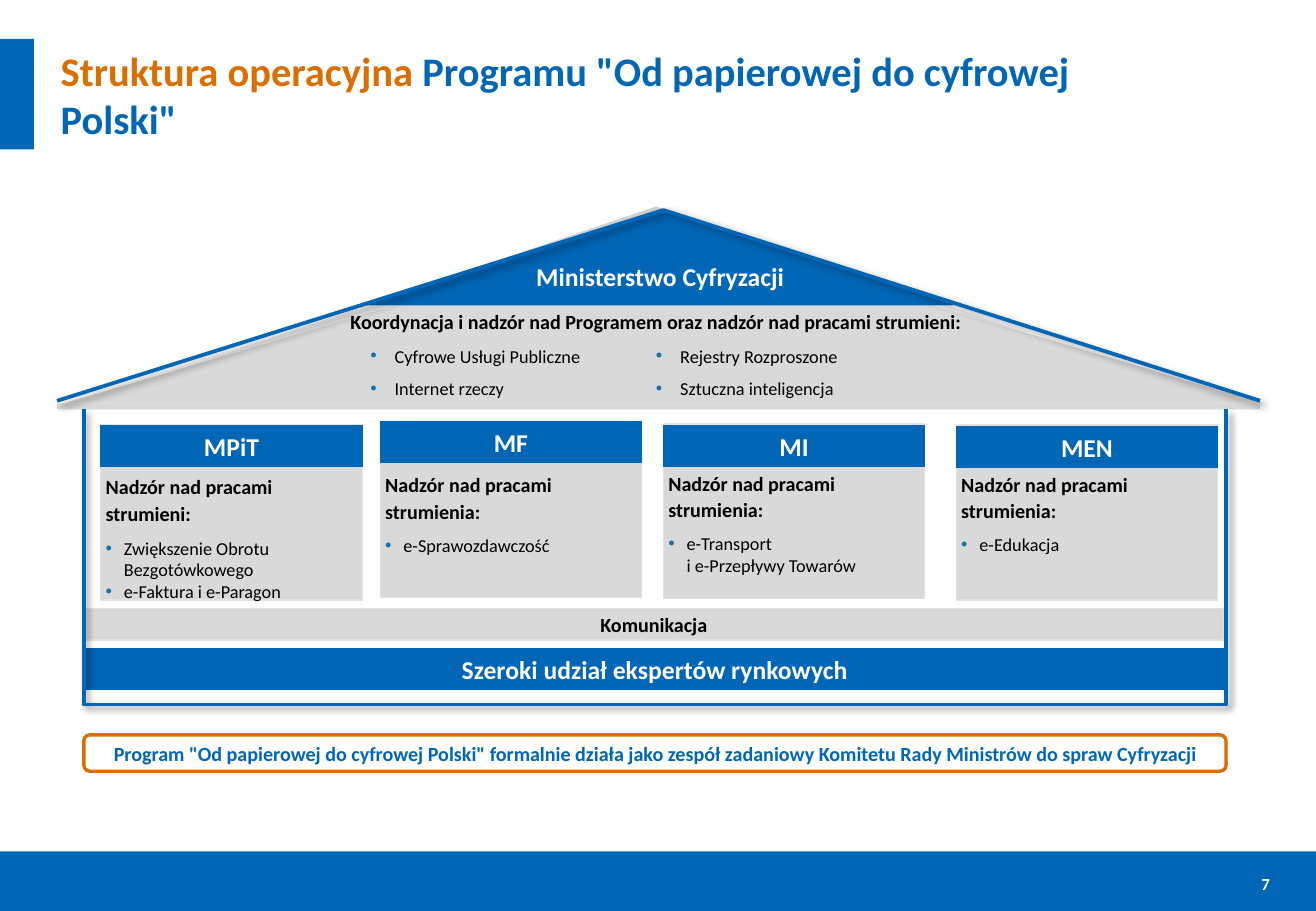
from dataclasses import dataclass
from typing import Optional

from lxml import etree
from pptx import Presentation
from pptx.dml.color import RGBColor
from pptx.enum.shapes import MSO_SHAPE
from pptx.enum.text import MSO_ANCHOR, PP_ALIGN
from pptx.oxml.ns import qn
from pptx.util import Inches, Pt

BLUE = RGBColor(0x01, 0x66, 0xB6)
ORANGE = RGBColor(0xDC, 0x6E, 0x00)
GREY = RGBColor(0xD9, 0xD9, 0xD9)
EDGE = RGBColor(0xE2, 0xE2, 0xE2)
BULLET = RGBColor(0x11, 0x74, 0xAE)
BLACK = RGBColor(0, 0, 0)
WHITE = RGBColor(0xFF, 0xFF, 0xFF)
ROOF_SHADES = ((0, "D0D0D0"), (50, "EDEDED"), (85, "FFFFFF"))

RECT, TRIANGLE = MSO_SHAPE.RECTANGLE, MSO_SHAPE.ISOSCELES_TRIANGLE
TRAPEZOID, ROUNDED = MSO_SHAPE.TRAPEZOID, MSO_SHAPE.ROUNDED_RECTANGLE
LEFT, CENTER = PP_ALIGN.LEFT, PP_ALIGN.CENTER
TOP, MIDDLE = MSO_ANCHOR.TOP, MSO_ANCHOR.MIDDLE

FONT = "Calibri"
HEADING, STRONG, BODY = 15.2, 11.9, 10.8
COLUMN_WIDTH, COLUMN_HEIGHT, HEADER_HEIGHT = 2.15, 1.44, 0.34

Box = tuple[float, float, float, float]
Points = list[tuple[float, float]]


@dataclass
class Ministry:
    name: str
    left: float
    header_top: float
    body_top: float
    lead: str
    leading: float
    streams: list[str]


@dataclass
class Label:
    text: str
    size: float
    color: RGBColor
    insets: Box = (0.1, 0.05, 0.1, 0.05)


MINISTRIES = [
    Ministry("MPiT", 0.83, 3.5, 3.5, "Nadzór nad pracami strumieni:", 16.2,
             ["Zwiększenie Obrotu Bezgotówkowego", "e-Faktura i e-Paragon"]),
    Ministry("MF", 3.13, 3.47, 3.48, "Nadzór nad pracami strumienia:", 16.2,
             ["e-Sprawozdawczość"]),
    Ministry("MI", 5.46, 3.5, 3.49, "Nadzór nad pracami strumienia:", 15.2,
             ["e-Transport\vi e-Przepływy Towarów"]),
    Ministry("MEN", 7.87, 3.51, 3.5, "Nadzór nad pracami strumienia:", 15.2,
             ["e-Edukacja"]),
]
COORDINATED = [["Cyfrowe Usługi Publiczne", "Internet rzeczy"],
               ["Rejestry Rozproszone", "Sztuczna inteligencja"]]


def set_frame(frame, insets: Box, anchor=TOP) -> None:
    frame.word_wrap = True
    frame.vertical_anchor = anchor
    (frame.margin_left, frame.margin_top,
     frame.margin_right, frame.margin_bottom) = map(Inches, insets)


def style(paragraph, size: float, color: RGBColor, bold=True, align=LEFT) -> None:
    paragraph.alignment = align
    for run in paragraph.runs:
        run.font.name, run.font.size, run.font.bold = FONT, Pt(size), bold
        run.font.color.rgb = color


def bullet(paragraph, text: str, indent: float) -> None:
    paragraph.text = text
    properties = paragraph._p.get_or_add_pPr()
    properties.set("marL", str(Inches(indent)))
    properties.set("indent", str(-Inches(indent)))
    color = etree.SubElement(properties, qn("a:buClr"))
    etree.SubElement(color, qn("a:srgbClr"), val=str(BULLET))
    etree.SubElement(properties, qn("a:buFont"), typeface="Arial")
    etree.SubElement(properties, qn("a:buChar"), char="•")
    style(paragraph, BODY, BLACK, bold=False)


def add_block(slide, box: Box, fill: RGBColor, line: Optional[RGBColor] = None,
              width: float = 0.5, kind=RECT, label: Optional[Label] = None):
    block = slide.shapes.add_shape(kind, *map(Inches, box))
    block.shadow.inherit = False
    block.fill.solid()
    block.fill.fore_color.rgb = fill
    if line is None:
        block.line.fill.background()
    else:
        block.line.color.rgb = line
        block.line.width = Pt(width)
    if label:
        set_frame(block.text_frame, label.insets, MIDDLE)
        block.text_frame.text = label.text
        style(block.text_frame.paragraphs[0], label.size, label.color, align=CENTER)
    return block


def add_text(slide, box: Box, insets: Box, anchor=TOP):
    frame = slide.shapes.add_textbox(*map(Inches, box)).text_frame
    set_frame(frame, insets, anchor)
    return frame


def add_outline(slide, points: Points) -> None:
    start, *rest = [(Inches(x), Inches(y)) for x, y in points]
    builder = slide.shapes.build_freeform(*start)
    builder.add_line_segments(rest, close=False)
    outline = builder.convert_to_shape()
    outline.fill.background()
    outline.line.color.rgb = BLUE
    outline.line.width = Pt(2.25)
    effects = etree.SubElement(outline._element.spPr, qn("a:effectLst"))
    shadow = etree.SubElement(effects, qn("a:outerShdw"), blurRad=str(Pt(4)),
                              dist=str(Pt(3)), dir="2700000", algn="tl", rotWithShape="0")
    color = etree.SubElement(shadow, qn("a:srgbClr"), val=str(BLACK))
    etree.SubElement(color, qn("a:alpha"), val="40000")


def shade_roof(roof) -> None:
    roof.fill.gradient()
    gradient = roof._element.spPr.find(qn("a:gradFill"))
    for child in list(gradient):
        gradient.remove(child)
    stops = etree.SubElement(gradient, qn("a:gsLst"))
    for position, shade in ROOF_SHADES:
        stop = etree.SubElement(stops, qn("a:gs"), pos=str(position * 1000))
        etree.SubElement(stop, qn("a:srgbClr"), val=shade)
    etree.SubElement(gradient, qn("a:lin"), ang="5400000", scaled="0")


def add_ministry(slide, ministry: Ministry) -> None:
    body = add_block(slide, (ministry.left, ministry.body_top, COLUMN_WIDTH, COLUMN_HEIGHT),
                     GREY, EDGE, 0.75)
    frame = body.text_frame
    set_frame(frame, (0.04, 0.38, 0.04, 0.11))
    lead = frame.paragraphs[0]
    lead.text = ministry.lead
    lead.line_spacing, lead.space_after = Pt(ministry.leading), Pt(6.5)
    style(lead, STRONG, BLACK)
    for stream in ministry.streams:
        bullet(frame.add_paragraph(), stream, 0.15)
    add_block(slide, (ministry.left, ministry.header_top, COLUMN_WIDTH, HEADER_HEIGHT),
              BLUE, BLUE, label=Label(ministry.name, HEADING, WHITE))


def main() -> None:
    deck = Presentation()
    deck.slide_width, deck.slide_height = Inches(10.83), Inches(7.5)
    slide = deck.slides.add_slide(deck.slide_layouts[6])

    # Page frame, number and title
    add_block(slide, (0, 7.01, 10.83, 0.49), BLUE)
    add_block(slide, (0, 0.32, 0.28, 0.91), BLUE)
    number = add_text(slide, (10.38, 7.19, 0.3, 0.19), (0, 0, 0, 0)).paragraphs[0]
    number.text = "7"
    style(number, 10, WHITE)
    title = add_text(slide, (0.5, 0.32, 8.83, 0.91), (0, 0.05, 0, 0.05), MIDDLE).paragraphs[0]
    title.add_run().text = "Struktura operacyjna "
    title.add_run().text = 'Programu "Od papierowej do cyfrowej Polski"'
    style(title, 24, BLUE)
    title.runs[0].font.color.rgb = ORANGE

    # Roof
    roof = add_block(slide, (0.45, 1.7, 9.9, 1.7), WHITE, kind=TRIANGLE)
    roof.adjustments[0] = 0.5
    shade_roof(roof)
    attic = add_block(slide, (0.53, 2.33, 9.87, 0.99), GREY, kind=TRAPEZOID)
    attic.adjustments[0] = 3.38
    add_block(slide, (0.47, 3.32, 9.9, 0.05), GREY)
    gable = add_block(slide, (2.98, 1.74, 4.86, 0.77), BLUE, BLUE, kind=TRIANGLE,
                      label=Label("Ministerstwo Cyfryzacji", HEADING, WHITE,
                                  (0.11, 0.05, 0.11, 0.13)))
    gable.adjustments[0] = 0.51
    gable.text_frame.word_wrap = False
    add_outline(slide, [(0.47, 3.3), (5.46, 1.73), (10.37, 3.3)])

    # Coordinated streams
    coordination = add_text(slide, (2.77, 2.56, 5.25, 0.2), (0, 0, 0, 0)).paragraphs[0]
    coordination.text = "Koordynacja i nadzór nad Programem oraz nadzór nad pracami strumieni:"
    coordination.line_spacing = Pt(13.6)
    style(coordination, STRONG, BLACK, align=CENTER)
    for left, streams in zip((2.95, 5.3), COORDINATED):
        for row, stream in enumerate(streams):
            frame = add_text(slide, (left, 2.79 + 0.27 * row, 2.3, 0.33), (0.1, 0.05, 0.1, 0.05))
            bullet(frame.paragraphs[0], stream, 0.2)

    # Ministries, foundations and walls
    for ministry in MINISTRIES:
        add_ministry(slide, ministry)
    add_block(slide, (0.69, 5.01, 9.38, 0.26), GREY, EDGE, 0.75,
              label=Label("Komunikacja", STRONG, BLACK))
    add_block(slide, (0.7, 5.34, 9.38, 0.34), BLUE, BLUE,
              label=Label("Szeroki udział ekspertów rynkowych", HEADING, WHITE))
    add_outline(slide, [(0.69, 3.37), (0.69, 5.8), (10.09, 5.8), (10.09, 3.37)])

    # Formal status
    add_block(slide, (0.69, 6.05, 9.4, 0.3), WHITE, ORANGE, 2, ROUNDED,
              Label('Program "Od papierowej do cyfrowej Polski" formalnie działa jako zespół '
                    "zadaniowy Komitetu Rady Ministrów do spraw Cyfryzacji", STRONG, BLUE))

    deck.save("out.pptx")


if __name__ == "__main__":
    main()
